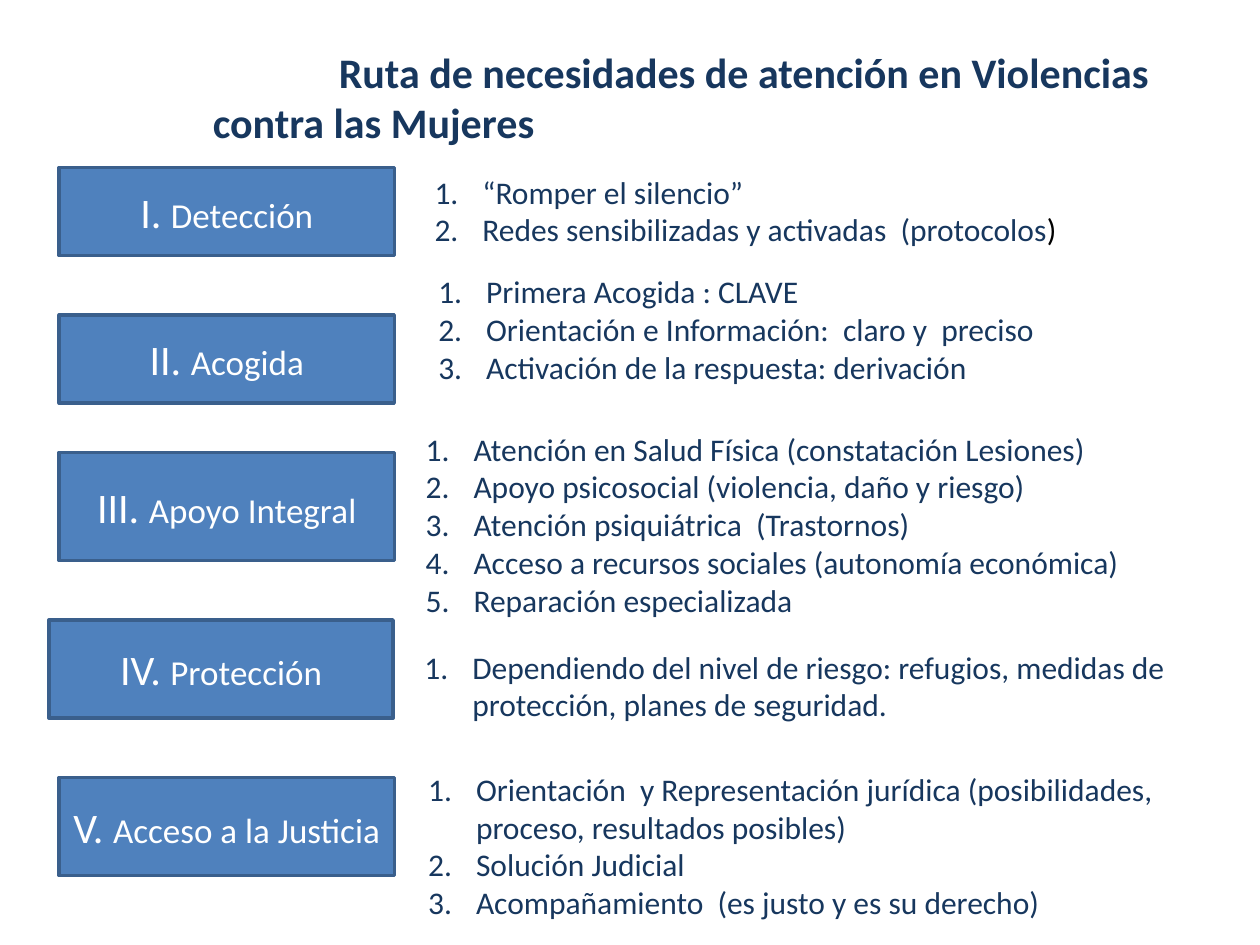
from lxml.etree import SubElement
from pptx import Presentation
from pptx.dml.color import RGBColor
from pptx.enum.shapes import MSO_SHAPE
from pptx.enum.text import MSO_ANCHOR, PP_ALIGN
from pptx.oxml.ns import qn
from pptx.util import Inches, Pt

NAVY = RGBColor(0x17, 0x37, 0x5E)
BLUE = RGBColor(0x4F, 0x81, 0xBD)
EDGE = RGBColor(0x3A, 0x5F, 0x8C)
WHITE = RGBColor(0xFF, 0xFF, 0xFF)
BLACK = RGBColor(0, 0, 0)

STAGES = [
    ("I. ", "Detección", (0.47, 1.33, 2.66, 0.7), (3.35, 1.32, 6.38, 0.71),
     ["“Romper el silencio”",
      "Redes sensibilizadas y activadas  (protocolos"]),
    ("II. ", "Acogida", (0.47, 2.5, 2.66, 0.7), (3.38, 2.11, 6.62, 1.01),
     ["Primera Acogida : CLAVE",
      "Orientación e Información:  claro y  preciso",
      "Activación de la respuesta: derivación"]),
    ("III. ", "Apoyo Integral", (0.47, 3.59, 2.66, 0.86), (3.28, 3.36, 6.29, 1.62),
     ["Atención en Salud Física (constatación Lesiones)",
      "Apoyo psicosocial (violencia, daño y riesgo)",
      "Atención psiquiátrica  (Trastornos)",
      "Acceso a recursos sociales (autonomía económica)",
      "Reparación especializada"]),
    ("IV. ", "Protección", (0.39, 4.92, 2.73, 0.78), (3.27, 5.09, 6.38, 0.71),
     ["Dependiendo del nivel de riesgo: refugios, medidas de protección, "
      "planes de seguridad."]),
    ("V. ", "Acceso a la Justicia", (0.47, 6.17, 2.66, 0.78), (3.3, 6.06, 6.27, 1.31),
     ["Orientación  y Representación jurídica (posibilidades, proceso, "
      "resultados posibles)",
      "Solución Judicial",
      "Acompañamiento  (es justo y es su derecho)"]),
]


def set_font(font, size, color):
    font.name = "Calibri"
    font.size = Pt(size)
    font.color.rgb = color


def add_text(slide, box):
    frame = slide.shapes.add_textbox(*map(Inches, box)).text_frame
    frame.word_wrap = True
    return frame


def add_title(slide, box):
    frame = add_text(slide, box)
    frame.vertical_anchor = MSO_ANCHOR.MIDDLE
    para = frame.paragraphs[0]
    para.text = "Ruta de necesidades de atención en Violencias contra las Mujeres"
    props = para._p.get_or_add_pPr()
    props.set("marL", str(Inches(1)))
    props.set("indent", str(Inches(1)))
    set_font(para.font, 24, NAVY)
    para.font.bold = True


def add_stage(slide, box, mark, name):
    shape = slide.shapes.add_shape(MSO_SHAPE.RECTANGLE, *map(Inches, box))
    shape.shadow.inherit = False
    shape.fill.solid()
    shape.fill.fore_color.rgb = BLUE
    shape.line.color.rgb = EDGE
    shape.line.width = Pt(2)
    frame = shape.text_frame
    frame.word_wrap = True
    frame.vertical_anchor = MSO_ANCHOR.MIDDLE
    para = frame.paragraphs[0]
    para.alignment = PP_ALIGN.CENTER
    for text, size in ((mark, 24), (name, 20)):
        run = para.add_run()
        run.text = text
        set_font(run.font, size, WHITE)


def add_list(slide, box, items):
    frame = add_text(slide, box)
    for i, item in enumerate(items):
        para = frame.add_paragraph() if i else frame.paragraphs[0]
        para.text = item
        props = para._p.get_or_add_pPr()
        props.set("marL", str(Inches(0.38)))
        props.set("indent", str(Inches(-0.38)))
        SubElement(props, qn("a:buFont"), typeface="+mj-lt")
        SubElement(props, qn("a:buAutoNum"), type="arabicPeriod")
        set_font(para.font, 18, NAVY)
    return frame


def main():
    deck = Presentation()
    deck.slide_width, deck.slide_height = Inches(10), Inches(7.5)
    slide = deck.slides.add_slide(deck.slide_layouts[6])
    add_title(slide, (0.59, 0.34, 8.98, 0.86))
    lists = []
    for mark, name, box, area, items in STAGES:
        add_stage(slide, box, mark, name)
        lists.append(add_list(slide, area, items))
    close = lists[0].paragraphs[-1].add_run()
    close.text = ")"
    close.font.color.rgb = BLACK
    deck.save("out.pptx")


if __name__ == "__main__":
    main()
